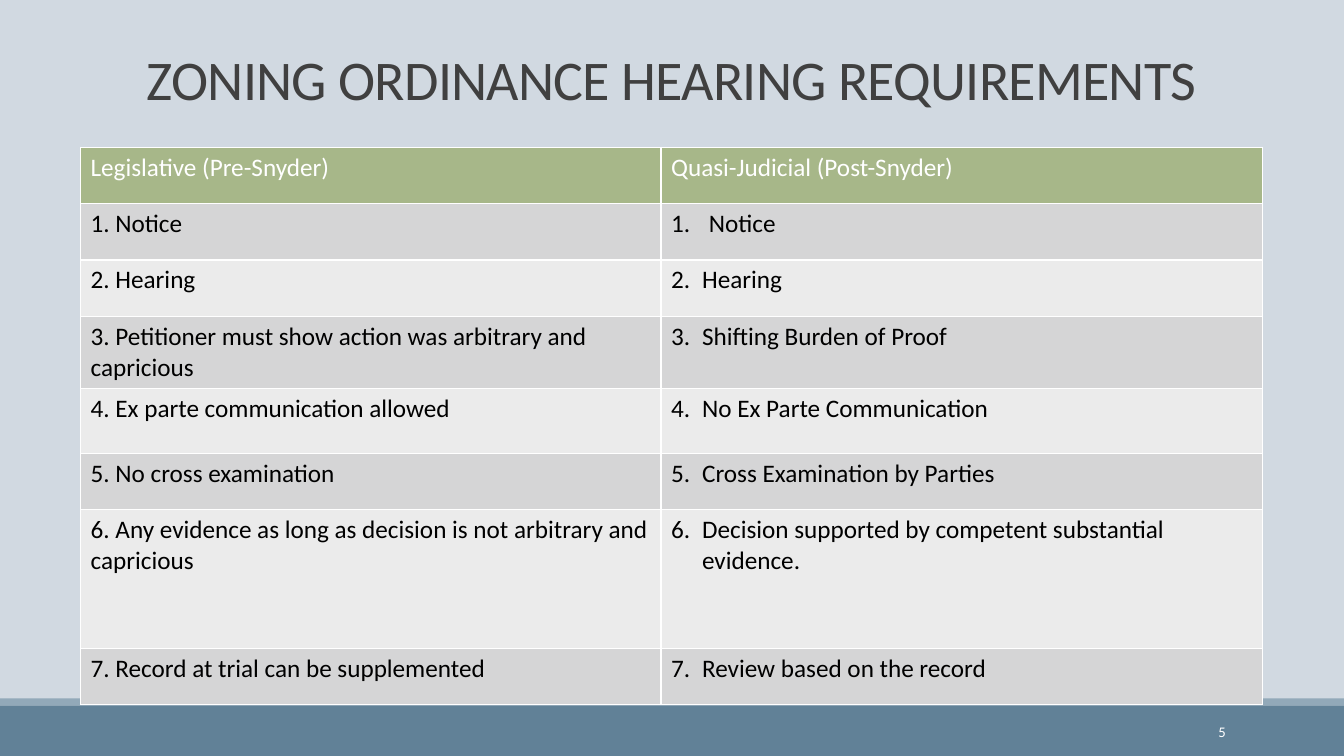
import pptx
import pptx.util
import pptx.dml.color
import pptx.enum.shapes
import pptx.enum.text
import pptx.oxml
import pptx.oxml.ns
from dataclasses import dataclass

Cm = pptx.util.Cm
Pt = pptx.util.Pt
ALIGN = pptx.enum.text.PP_ALIGN
ANCHOR = pptx.enum.text.MSO_ANCHOR


@dataclass(frozen=True)
class Theme:
    font: str = "Calibri"
    background: str = "D1D9E1"
    footer: str = "618197"
    footer_edge: str = "92A9B9"
    title: str = "404040"
    header: str = "A7B789"
    bands: tuple = ("D5D5D6", "EBEBEB")
    light: str = "FFFFFF"
    dark: str = "000000"
    title_size: float = 40
    body_size: float = 18
    number_size: float = 10.5


THEME = Theme()

HEADINGS = ("Legislative (Pre-Snyder)", "Quasi-Judicial (Post-Snyder)")
REQUIREMENTS = (
    ("Notice", "Notice"),
    ("Hearing", "Hearing"),
    ("Petitioner must show action was arbitrary and capricious",
     "Shifting Burden of Proof"),
    ("Ex parte communication allowed", "No Ex Parte Communication"),
    ("No cross examination", "Cross Examination by Parties"),
    ("Any evidence as long as decision is not arbitrary and capricious",
     "Decision supported by competent substantial evidence."),
    ("Record at trial can be supplemented", "Review based on the record"),
)
COLUMN_WIDTHS = (14.63, 15.16)
ROW_HEIGHTS = (1.42, 1.42, 1.42, 1.82, 1.63, 1.42, 3.5, 1.42)


def rgb(color):
    return pptx.dml.color.RGBColor.from_string(color)


def add_text(p, text, size, color):
    r = p.add_run()
    r.text = text
    r.font.name = THEME.font
    r.font.size = Pt(size)
    r.font.bold = False
    r.font.color.rgb = rgb(color)
    return r


def set_hanging(p, width, numbered=False):
    """Hang the paragraph by width, with an automatic number if asked."""
    pPr = p._p.get_or_add_pPr()
    pPr.set("marL", str(Cm(width)))
    pPr.set("indent", str(-Cm(width)))
    if numbered:
        bullet = pptx.oxml.parse_xml(
            f'<a:buAutoNum {pptx.oxml.ns.nsdecls("a")} type="arabicPeriod"/>')
        pPr.append(bullet)


def format_cell(cell, fill):
    tcPr = cell._tc.get_or_add_tcPr()
    for side in "LRTB":
        tcPr.append(pptx.oxml.parse_xml(
            f'<a:ln{side} {pptx.oxml.ns.nsdecls("a")} w="{Pt(1)}"><a:solidFill>'
            f'<a:srgbClr val="{THEME.light}"/></a:solidFill></a:ln{side}>'))
    cell.fill.solid()
    cell.fill.fore_color.rgb = rgb(fill)


def add_footer(s, left, top, width, height):
    # Thin edge above the solid band
    edge = 0.18
    for y, h, color in ((top, edge, THEME.footer_edge),
                        (top + edge, height - edge, THEME.footer)):
        sp = s.shapes.add_shape(pptx.enum.shapes.MSO_SHAPE.RECTANGLE,
                                Cm(left), Cm(y), Cm(width), Cm(h))
        sp.shadow.inherit = False
        sp.fill.solid()
        sp.fill.fore_color.rgb = rgb(color)
        sp.line.fill.background()


def add_slide_number(s, number, left, top, width, height):
    sp = s.shapes.add_textbox(Cm(left), Cm(top), Cm(width), Cm(height))
    tf = sp.text_frame
    tf.word_wrap = True
    tf.vertical_anchor = ANCHOR.MIDDLE
    p = tf.paragraphs[0]
    p.alignment = ALIGN.RIGHT
    add_text(p, number, THEME.number_size, THEME.light)


def add_title(s, text, left, top, width, height):
    sp = s.shapes.title
    sp.left, sp.top, sp.width, sp.height = Cm(left), Cm(top), Cm(width), Cm(height)
    tf = sp.text_frame
    tf.word_wrap = True
    tf.auto_size = pptx.enum.text.MSO_AUTO_SIZE.NONE
    tf.vertical_anchor = ANCHOR.BOTTOM
    p = tf.paragraphs[0]
    p.alignment = ALIGN.CENTER
    p.line_spacing = 0.85
    r = add_text(p, text, THEME.title_size, THEME.title)
    r._r.get_or_add_rPr().set("spc", "-50")


def add_requirements(s, left, top):
    table = s.shapes.add_table(
        len(ROW_HEIGHTS), len(COLUMN_WIDTHS), Cm(left), Cm(top),
        Cm(sum(COLUMN_WIDTHS)), Cm(sum(ROW_HEIGHTS))).table
    for column, width in zip(table.columns, COLUMN_WIDTHS):
        column.width = Cm(width)
    for row, height in zip(table.rows, ROW_HEIGHTS):
        row.height = Cm(height)

    # Header row
    for c, heading in enumerate(HEADINGS):
        cell = table.cell(0, c)
        format_cell(cell, THEME.header)
        add_text(cell.text_frame.paragraphs[0], heading,
                 THEME.body_size, THEME.light)

    # Numbered requirements, the right column with a hanging indent
    for n, pair in enumerate(REQUIREMENTS, start=1):
        for c, text in enumerate(pair):
            cell = table.cell(n, c)
            format_cell(cell, THEME.bands[(n - 1) % 2])
            p = cell.text_frame.paragraphs[0]
            if c == 0:
                text = f"{n}. {text}"
            elif n == 1:
                set_hanging(p, 0.95, numbered=True)
            else:
                set_hanging(p, 0.78)
                text = f"{n}.\t{text}"
            add_text(p, text, THEME.body_size, THEME.dark)


def main():
    prs = pptx.Presentation()
    prs.slide_width, prs.slide_height = Cm(33.87), Cm(19.05)
    s = prs.slides.add_slide(prs.slide_layouts[5])
    s.background.fill.solid()
    s.background.fill.fore_color.rgb = rgb(THEME.background)

    add_footer(s, 0, 17.6, 33.87, 1.45)
    add_title(s, "ZONING ORDINANCE HEARING REQUIREMENTS", 2.03, -1.17, 29.79, 4.11)
    add_requirements(s, 2.03, 3.71)
    add_slide_number(s, "5", 27.51, 17.93, 3.63, 1.02)
    prs.save("out.pptx")


if __name__ == "__main__":
    main()
